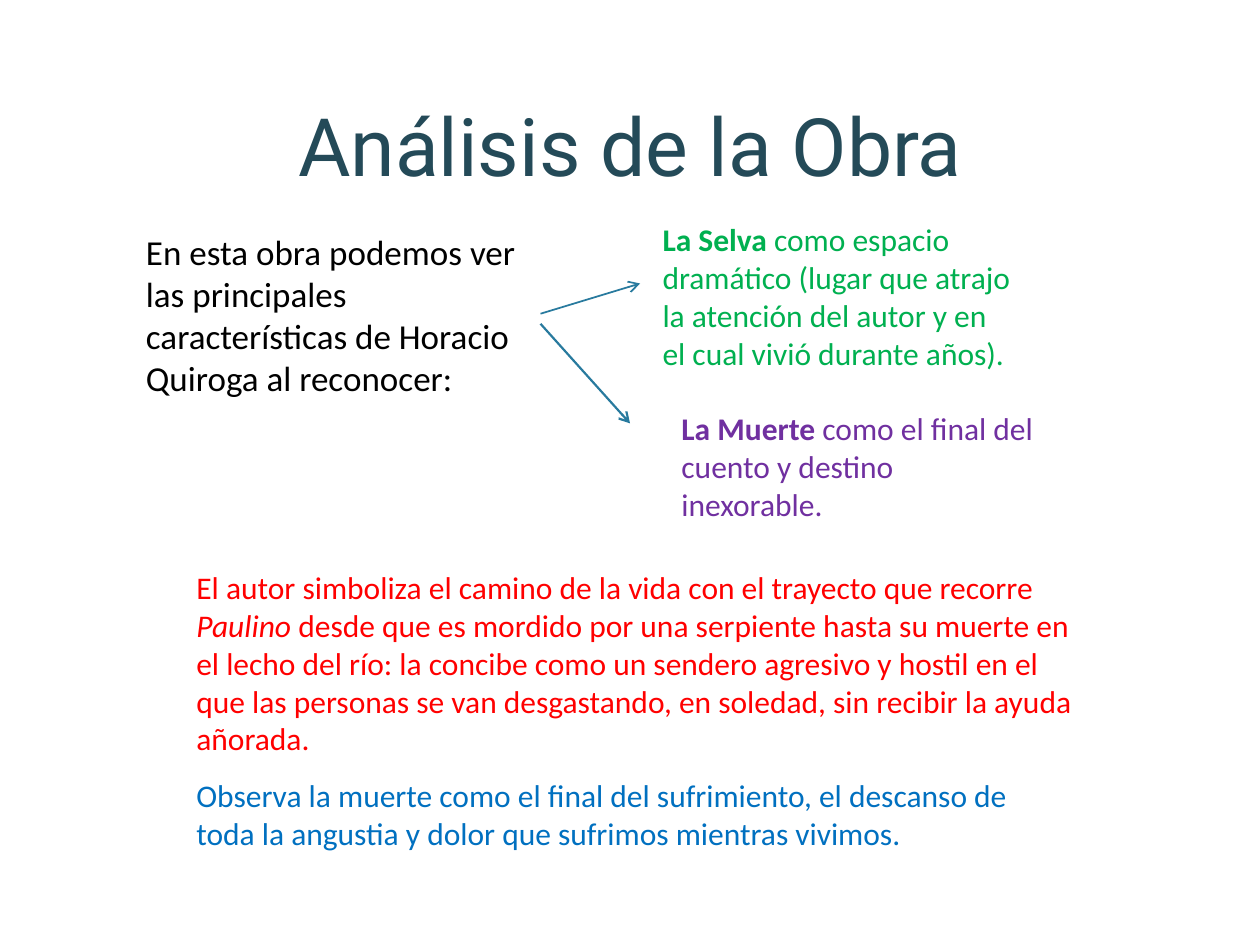
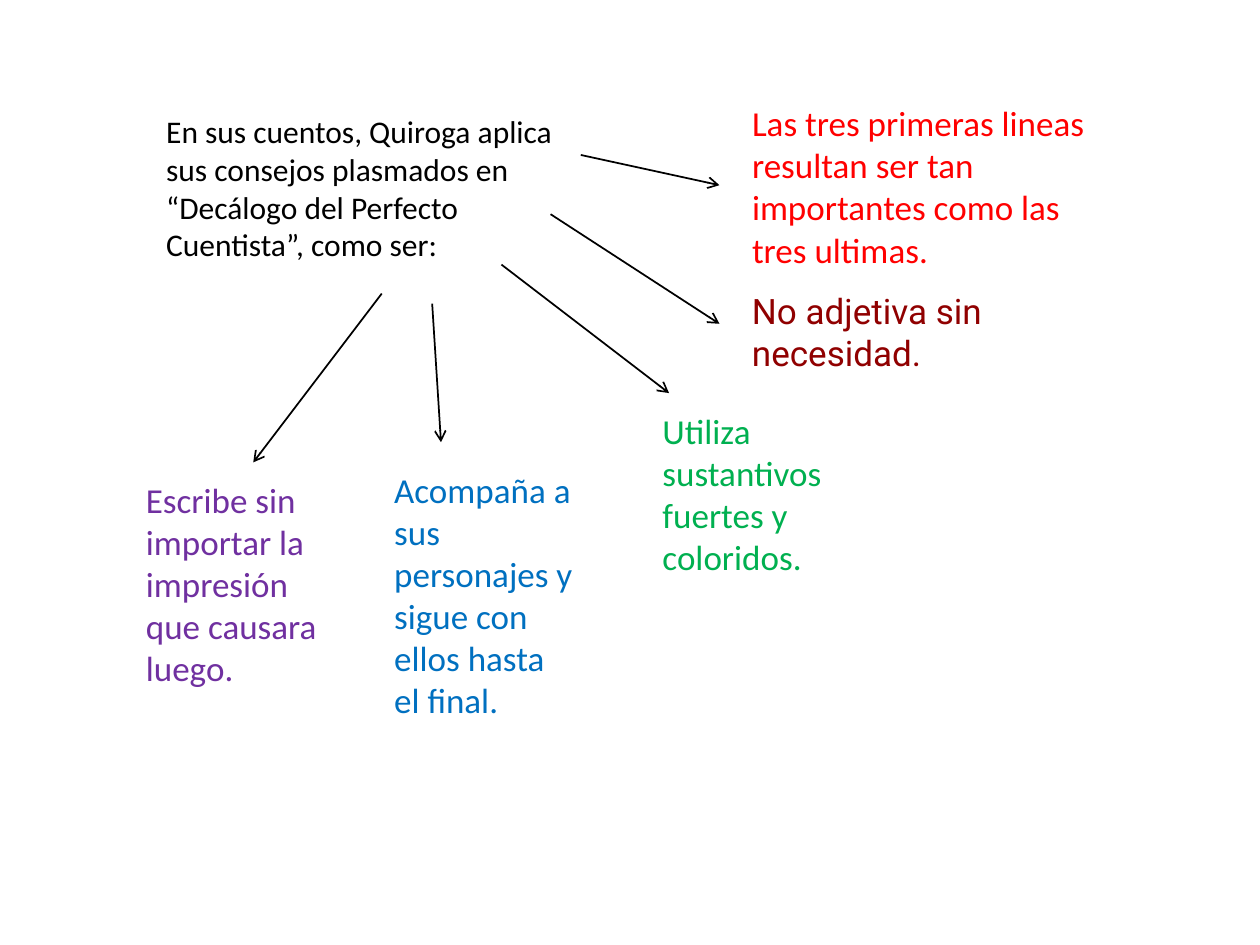
from lxml import etree
from pptx import Presentation
from pptx.dml.color import RGBColor
from pptx.enum.shapes import MSO_CONNECTOR
from pptx.enum.text import MSO_ANCHOR, MSO_AUTO_SIZE, PP_ALIGN
from pptx.oxml.ns import qn
from pptx.util import Inches, Pt

STRAIGHT = MSO_CONNECTOR.STRAIGHT
BOTTOM = MSO_ANCHOR.BOTTOM
GROW = MSO_AUTO_SIZE.SHAPE_TO_FIT_TEXT
CENTER = PP_ALIGN.CENTER

BLACK = RGBColor(0x00, 0x00, 0x00)
SLATE = RGBColor(0x24, 0x4A, 0x58)
TEAL = RGBColor(0x28, 0x7A, 0x9E)
GREEN = RGBColor(0x00, 0xB0, 0x50)
PURPLE = RGBColor(0x70, 0x30, 0xA0)
RED = RGBColor(0xFF, 0x00, 0x00)
MAROON = RGBColor(0x90, 0x00, 0x00)
BLUE = RGBColor(0x00, 0x70, 0xC0)

BODY = "Calibri"
HEAD = "Roboto"


class Deck:
    """Holds the presentation, its text style and the current slide."""

    def __init__(self):
        self.file = Presentation()
        self.file.slide_width = Inches(10)
        self.file.slide_height = Inches(7.5)
        self.slide = None

    def page(self):
        self.slide = self.file.slides.add_slide(self.file.slide_layouts[6])

    def text(self, place, words, color, size=20, font=BODY, bold=None, slant=None):
        box = self.slide.shapes.add_textbox(*map(Inches, place))
        frame = box.text_frame
        frame.word_wrap = True
        frame.auto_size = GROW
        para = frame.paragraphs[0]
        para.font.name = font
        para.font.size = Pt(size)
        para.font.color.rgb = color
        for part in [words] if isinstance(words, str) else words:
            run = para.add_run()
            run.text = part
            if part == bold:
                run.font.bold = True
            if part == slant:
                run.font.italic = True
        return frame

    def title(self, words):
        frame = self.text((0.6, 0.12, 8.8, 1.46), words, SLATE, 46, HEAD)
        frame.auto_size = MSO_AUTO_SIZE.NONE
        frame.vertical_anchor = BOTTOM
        frame.paragraphs[0].alignment = CENTER

    def arrow(self, start, end, color=BLACK, width=1):
        line = self.slide.shapes.add_connector(STRAIGHT, *map(Inches, start + end))
        line.line.color.rgb = color
        line.line.width = Pt(width)
        etree.SubElement(line.line._get_or_add_ln(), qn("a:tailEnd"), type="arrow")
        etree.SubElement(line._element.spPr, qn("a:effectLst"))


def themes(deck):
    deck.page()
    deck.title("Análisis de la Obra")
    deck.text((1.06, 1.78, 3.39, 1.75),
              "En esta obra podemos ver las principales características de "
              "Horacio Quiroga al reconocer:", BLACK)
    deck.text((5.16, 1.7, 2.99, 1.31),
              ["La Selva ", "como espacio dramático (lugar que atrajo la atención "
               "del autor y en el cual vivió durante años)."],
              GREEN, 18, bold="La Selva ")
    deck.text((5.31, 3.2, 2.99, 1.01),
              ["La Muerte", " como el final del cuento y destino inexorable."],
              PURPLE, 18, bold="La Muerte")
    deck.arrow((4.29, 2.49), (5.08, 2.25), TEAL)
    deck.arrow((4.29, 2.57), (5, 3.36), TEAL, 1.25)
    deck.text((1.46, 4.46, 7.32, 1.62),
              ["El autor simboliza el camino de la vida con el trayecto que recorre ",
               "Paulino",
               " desde que es mordido por una serpiente hasta su muerte en el lecho "
               "del río: la concibe como un sendero agresivo y hostil en el que las "
               "personas se van desgastando, en soledad, sin recibir la ayuda añorada."],
              RED, 18, slant="Paulino")
    deck.text((1.46, 6.11, 6.69, 0.71),
              "Observa la muerte como el final del sufrimiento, el descanso de toda "
              "la angustia y dolor que sufrimos mientras vivimos.", BLUE, 18)


def advice(deck):
    deck.page()
    deck.text((1.22, 0.84, 3.62, 1.31),
              "En sus cuentos, Quiroga aplica sus consejos plasmados en “Decálogo "
              "del Perfecto Cuentista”, como ser:", BLACK, 18)
    tips = [
        ((5.87, 0.76, 2.99, 1.45), RED, BODY, (4.61, 1.23), (5.71, 1.47),
         "Las tres primeras lineas resultan ser tan importantes como las tres ultimas."),
        ((5.87, 2.25, 2.6, 0.77), MAROON, HEAD, (4.37, 1.7), (5.71, 2.57),
         "No adjetiva sin necesidad."),
        ((5.16, 3.2, 1.73, 1.45), GREEN, BODY, (3.98, 2.1), (5.31, 3.12),
         "Utiliza sustantivos fuertes y coloridos."),
        ((3.03, 3.67, 1.65, 2.12), BLUE, BODY, (3.43, 2.41), (3.5, 3.51),
         "Acompaña a sus personajes y sigue con ellos hasta el final."),
        ((1.06, 3.75, 1.57, 1.78), PURPLE, BODY, (3.03, 2.33), (2.01, 3.67),
         "Escribe sin importar la impresión que causara luego."),
    ]
    for place, color, font, start, end, words in tips:
        deck.text(place, words, color, font=font)
        deck.arrow(start, end)


def main():
    deck = Deck()
    themes(deck)
    advice(deck)
    deck.file.save("out.pptx")


if __name__ == "__main__":
    main()
